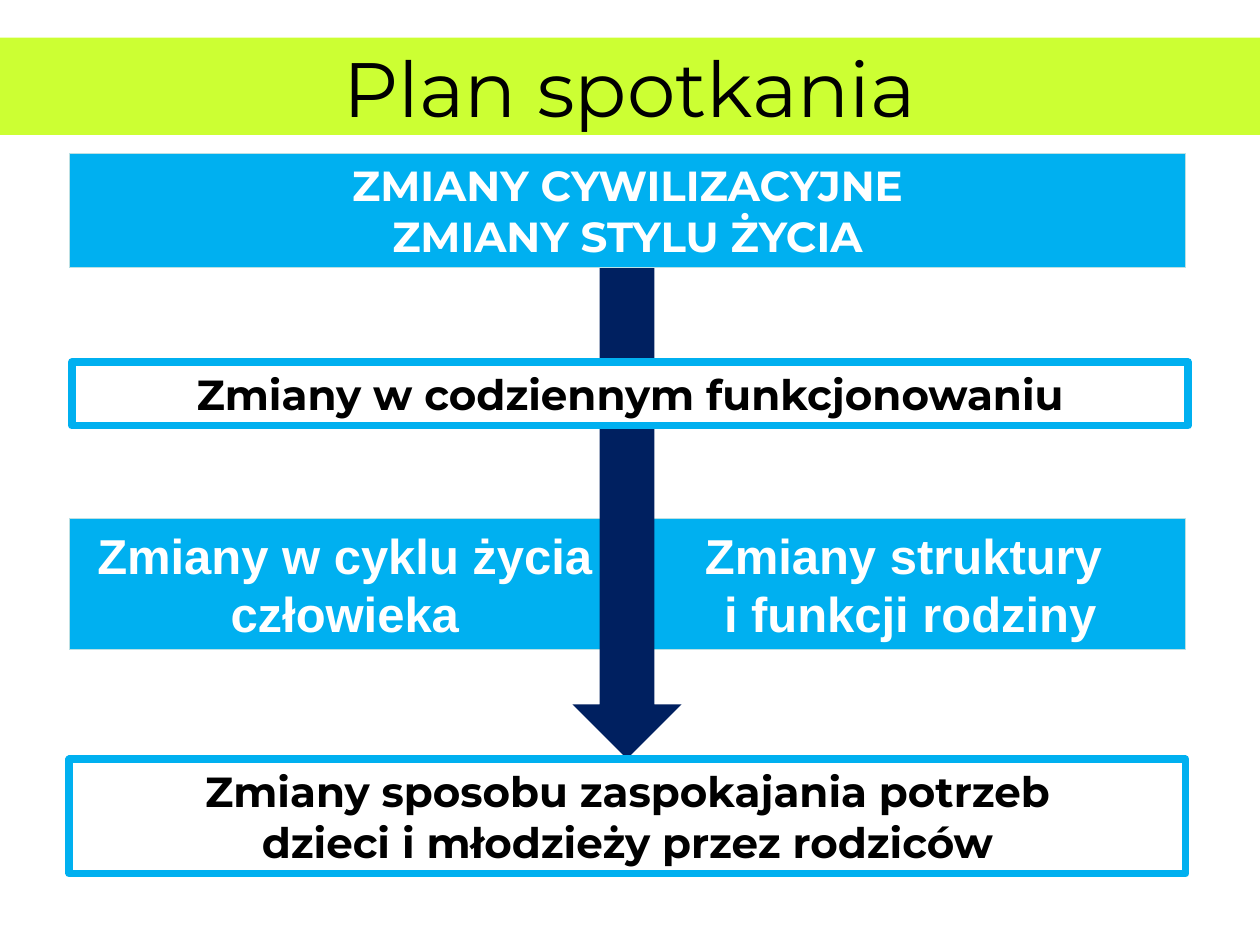
from dataclasses import dataclass

from pptx import Presentation
from pptx.dml.color import RGBColor
from pptx.enum.shapes import MSO_SHAPE
from pptx.enum.text import MSO_ANCHOR, MSO_AUTO_SIZE, PP_ALIGN
from pptx.shapes.autoshape import Shape
from pptx.slide import Slide
from pptx.util import Cm, Pt

COLORS = {
    "lime": "CCFF33",
    "blue": "00B0F0",
    "pale": "BBE0E3",
    "navy": "002060",
    "white": "FFFFFF",
    "black": "000000",
}
LEFT, WIDTH = 1.4, 22.5
HALF_WIDTH = 11.1
CYCLE_TOP, CYCLE_HEIGHT = 10.46, 2.64


@dataclass(frozen=True)
class Style:
    fill: str
    line: str | None
    line_width: float
    text: str
    bold: bool = True
    anchor: MSO_ANCHOR = MSO_ANCHOR.TOP
    auto_size: MSO_AUTO_SIZE = MSO_AUTO_SIZE.SHAPE_TO_FIT_TEXT


@dataclass(frozen=True)
class Box:
    text: str
    left: float
    top: float
    width: float
    height: float
    style: Style
    font: str = "Montserrat"
    size: int = 24


FILLED = Style("blue", "pale", 0.75, "white")
OUTLINED = Style("white", "blue", 4.5, "black")
BANNER = Style("lime", None, 0, "black", False, MSO_ANCHOR.MIDDLE, MSO_AUTO_SIZE.NONE)

CYCLE_BOXES = [
    Box("Zmiany w cyklu życia człowieka", LEFT, CYCLE_TOP,
        HALF_WIDTH, CYCLE_HEIGHT, FILLED, "Arial", 28),
    Box("Zmiany struktury \vi funkcji rodziny", LEFT + WIDTH - HALF_WIDTH, CYCLE_TOP,
        HALF_WIDTH, CYCLE_HEIGHT, FILLED, "Arial", 28),
]
FRONT_BOXES = [
    Box("Plan spotkania", 0, 0.76, 25.4, 1.96, BANNER, size=44),
    Box("ZMIANY CYWILIZACYJNE\nZMIANY STYLU ŻYCIA", LEFT, 3.1, WIDTH, 2.3, FILLED),
    Box("Zmiany w codziennym funkcjonowaniu", 1.45, 7.3, WIDTH, 1.28, OUTLINED),
    Box("Zmiany sposobu zaspokajania potrzeb\vdzieci i młodzieży przez rodziców",
        LEFT, 15.31, WIDTH, 2.3, OUTLINED),
]


def color(name: str) -> RGBColor:
    return RGBColor.from_string(COLORS[name])


def add_filled_shape(slide: Slide, kind: MSO_SHAPE, left: float, top: float,
                     width: float, height: float, fill: str) -> Shape:
    """Add a flat shape without outline; lengths are in centimetres."""
    shape = slide.shapes.add_shape(kind, Cm(left), Cm(top), Cm(width), Cm(height))
    shape.shadow.inherit = False
    shape.fill.solid()
    shape.fill.fore_color.rgb = color(fill)
    shape.line.fill.background()
    return shape


def add_box(slide: Slide, box: Box) -> None:
    style = box.style
    shape = add_filled_shape(slide, MSO_SHAPE.RECTANGLE, box.left, box.top,
                             box.width, box.height, style.fill)
    if style.line:
        shape.line.color.rgb = color(style.line)
        shape.line.width = Pt(style.line_width)
    text_frame = shape.text_frame
    text_frame.text = box.text
    text_frame.word_wrap = True
    text_frame.auto_size = style.auto_size
    text_frame.vertical_anchor = style.anchor
    for paragraph in text_frame.paragraphs:
        paragraph.alignment = PP_ALIGN.CENTER
        # Paragraph-level size also covers the line breaks
        paragraph.font.size = Pt(box.size)
        for run in paragraph.runs:
            run.font.name = box.font
            run.font.size = Pt(box.size)
            run.font.bold = style.bold
            run.font.color.rgb = color(style.text)


def main() -> None:
    presentation = Presentation()
    presentation.slide_width = Cm(25.4)
    presentation.slide_height = Cm(19.05)
    slide = presentation.slides.add_slide(presentation.slide_layouts[6])
    for box in CYCLE_BOXES:
        add_box(slide, box)
    add_filled_shape(slide, MSO_SHAPE.DOWN_ARROW, 11.54, 3.96, 2.2, 11.34, "navy")
    for box in FRONT_BOXES:
        add_box(slide, box)
    presentation.save("out.pptx")


if __name__ == "__main__":
    main()
